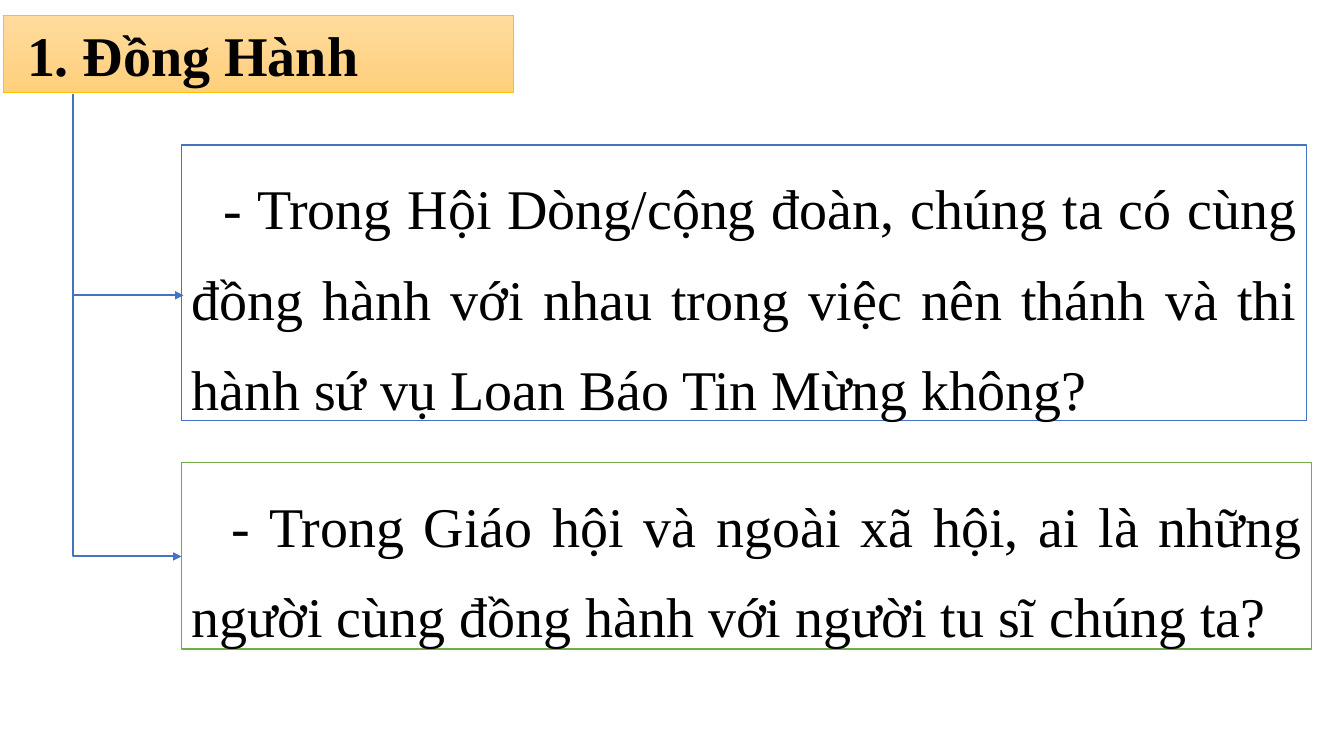
from pptx import Presentation
from pptx.dml.color import RGBColor as Rgb
from pptx.enum.shapes import MSO_CONNECTOR as Conn, MSO_SHAPE as Shape
from pptx.enum.text import MSO_ANCHOR as Anchor, MSO_AUTO_SIZE as Fit, PP_ALIGN as Align
from pptx.oxml.ns import qn
from pptx.util import Pt
from lxml.etree import SubElement as Sub

PX = 9144  # 100 px to the inch
COLORS = {
    "text": "000000", "white": "FFFFFF", "blue": "4472C4", "green": "70AD47",
    "gold": "FFC000", "light": "FFDB9E", "deep": "FFD07C",
}


def color(name):
    return Rgb.from_string(COLORS[name])


class Board:
    font = "Times New Roman"
    size = 40

    def __init__(self, deck):
        self.slide = deck.slides.add_slide(deck.slide_layouts[6])

    def box(self, left, top, width, height, line, weight):
        box = self.slide.shapes.add_shape(
            Shape.RECTANGLE, *(n * PX for n in (left, top, width, height)))
        box.shadow.inherit = False
        box.fill.solid()
        box.fill.fore_color.rgb = color("white")
        box.line.color.rgb = color(line)
        box.line.width = Pt(weight)
        return box

    def blend(self, box, *names):
        box.fill.gradient()
        box.fill.gradient_angle = 270
        for stop, name in zip(box.fill.gradient_stops, names):
            stop.color.rgb = color(name)

    def label(self, box, words, indent, align, space=1.0, bold=False):
        frame = box.text_frame
        frame.word_wrap = True
        frame.auto_size = Fit.SHAPE_TO_FIT_TEXT
        frame.vertical_anchor = Anchor.TOP
        para = frame.paragraphs[0]
        para.alignment = align
        para.line_spacing = space
        props = para._p.get_or_add_pPr()
        props.set("marL", "0")
        props.set("indent", str(indent * PX))
        run = para.add_run()
        run.text = words
        run.font.name = self.font
        run.font.size = Pt(self.size)
        run.font.bold = bold
        run.font.color.rgb = color("text")

    def elbow(self, x1, y1, x2, y2, line):
        """Arrow that runs down, then right: a one-bend elbow on its side."""
        mid_x, mid_y = (x1 + x2) * PX // 2, (y1 + y2) * PX // 2
        half_w, half_h = (y2 - y1) * PX // 2, (x2 - x1) * PX // 2
        arrow = self.slide.shapes.add_connector(
            Conn.ELBOW, mid_x + half_w, mid_y - half_h,
            mid_x - half_w, mid_y + half_h)
        props = arrow._element.spPr
        props.find(qn("a:xfrm")).set("rot", str(270 * 60000))
        props.find(qn("a:prstGeom")).set("prst", "bentConnector2")
        arrow.line.color.rgb = color(line)
        arrow.line.width = Pt(1.5)
        Sub(props.find(qn("a:ln")), qn("a:tailEnd"), type="triangle")
        Sub(props, qn("a:effectLst"))


def main():
    deck = Presentation()
    deck.slide_width, deck.slide_height = 1333 * PX, 750 * PX
    board = Board(deck)

    # Heading
    head = board.box(3, 15, 506, 77, "gold", 0.5)
    board.blend(head, "light", "deep")
    board.label(head, "1. Đồng Hành", 14, Align.LEFT, bold=True)

    # Questions
    asks = [
        (144, 1116, 273, "blue", 32,
         "- Trong Hội Dòng/cộng đoàn, chúng ta có cùng đồng hành với nhau "
         "trong việc nên thánh và thi hành sứ vụ Loan Báo Tin Mừng không?"),
        (459, 1121, 185, "green", 40,
         "- Trong Giáo hội và ngoài xã hội, ai là những người cùng đồng hành "
         "với người tu sĩ chúng ta?"),
    ]
    for top, width, height, line, indent, words in asks:
        box = board.box(180, top, width, height, line, 1)
        board.label(box, words, indent, Align.JUSTIFY, space=1.35)

    # Arrows from the heading to each question
    for x, y in ((180, 552), (182, 293)):
        board.elbow(72, 93, x, y, "blue")

    deck.save("out.pptx")


if __name__ == "__main__":
    main()
